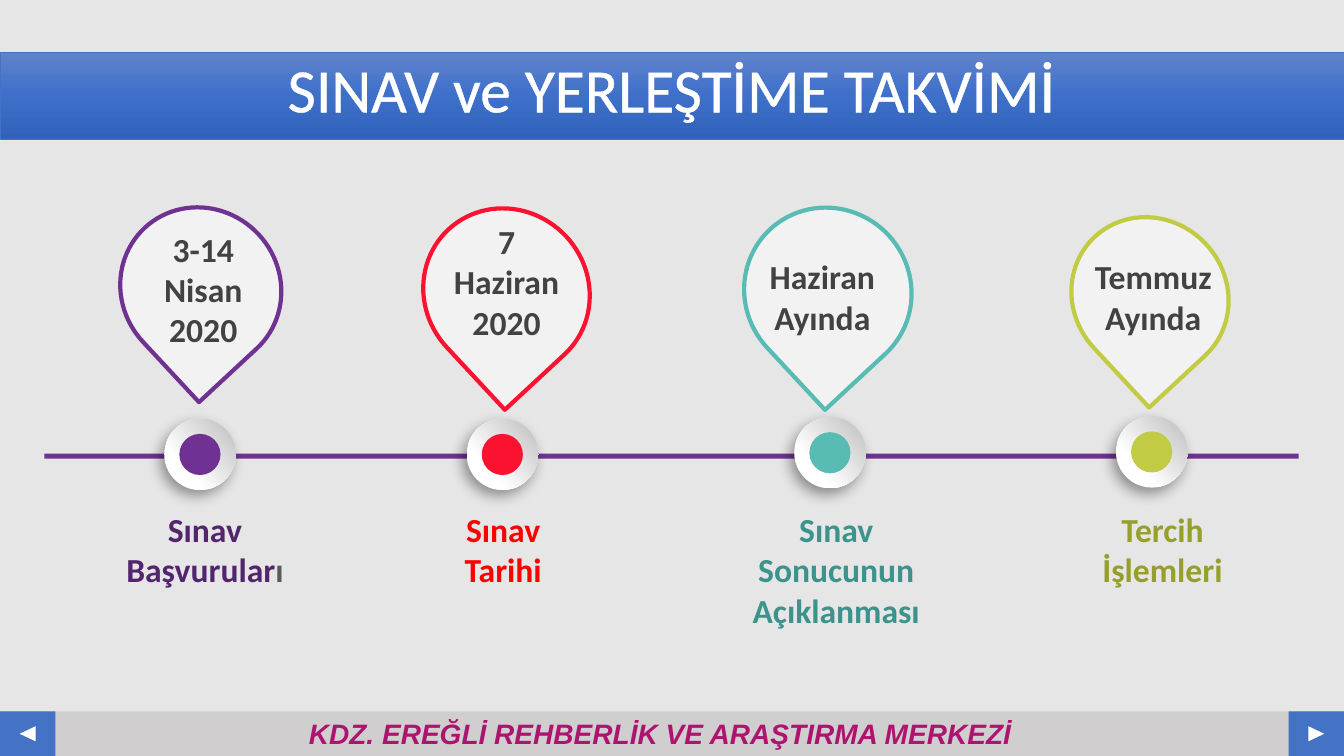
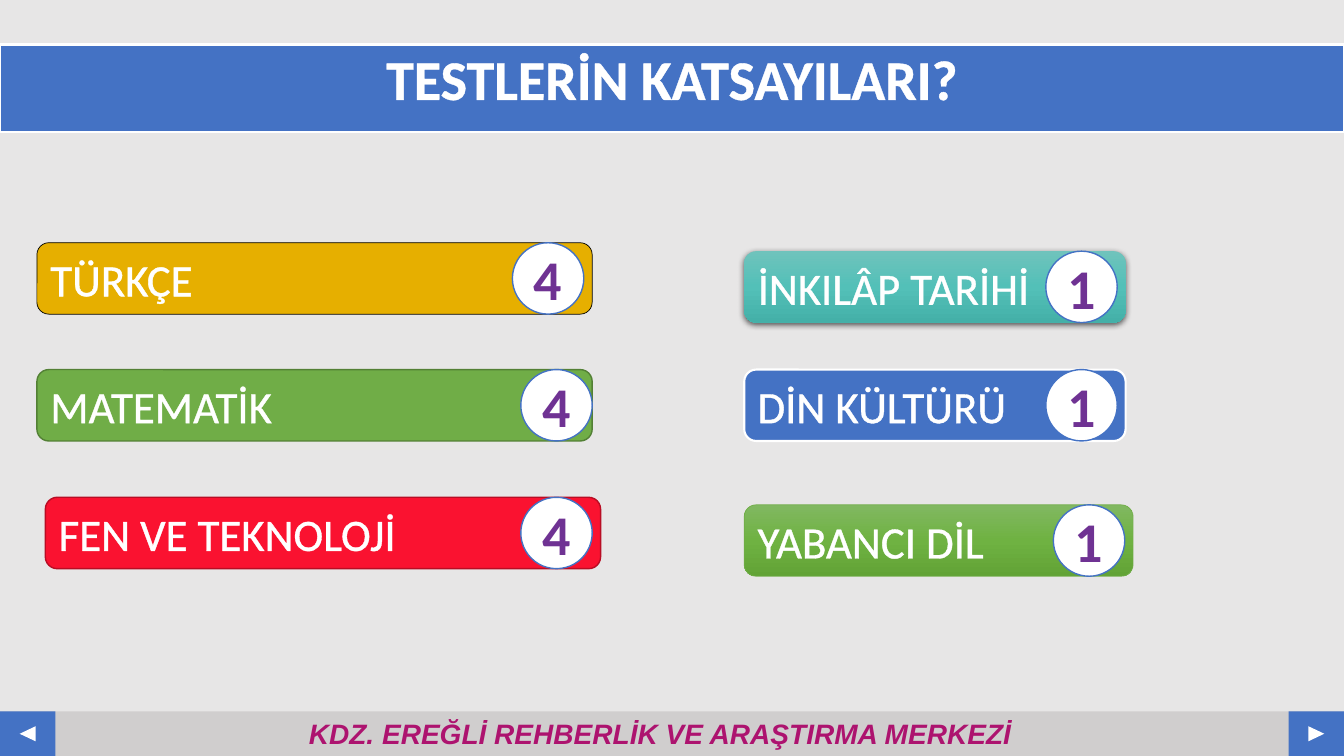
"""Build two exam guidance slides: the calendar and the test coefficients."""
from copy import deepcopy
from dataclasses import dataclass

from lxml import etree
from pptx import Presentation
from pptx import util as u
from pptx.dml.color import RGBColor
from pptx.enum import shapes, text
from pptx.oxml.ns import qn


@dataclass(frozen=True)
class Theme:
    body_font: str = "Calibri"
    footer_font: str = "Arial"
    background: str = "E7E6E6"
    footer: str = "D0CECE"
    footer_text: str = "AD136F"
    white: str = "FFFFFF"
    black: str = "000000"
    blue: str = "4472C4"
    purple: str = "6F3293"
    red: str = "FA1230"
    teal: str = "58BBB4"
    lime: str = "C2CB44"
    green: str = "70AD47"
    gold: str = "E6AF00"
    pin: str = "F2F2F2"
    pin_text: str = "424242"
    gray: str = "595959"
    title_fade: tuple = (((0, "6183CB"), (50, "3E70CA"), (100, "3062BB")), 90)
    teal_fade: tuple = (((0, "6FC3BC"), (50, "53C0B8"), (100, "44B0A8")), 90)
    green_fade: tuple = (((0, "81B861"), (50, "6FB242"), (100, "62A336")), 90)
    ring_fade: tuple = (((29, "FFFFFF"), (98, "BFBFBF")), 318)
    footer_size: int = 20
    label_size: int = 24
    pill_size: int = 32
    badge_size: int = 40


theme = Theme()
kinds = shapes.MSO_SHAPE
align = text.PP_ALIGN
anchors = text.MSO_ANCHOR

presentation = Presentation()
presentation.slide_width = u.Inches(13.33)
presentation.slide_height = u.Inches(7.5)
COLUMNS, ROWS = 160, 90
column = presentation.slide_width / COLUMNS
row = presentation.slide_height / ROWS


def draw(slide, kind, left, top, width, height, fill=None, line=None, shadow=None):
    """Place a preset shape, or a text box when kind is None, on the grid."""
    box = [round(v) for v in (left * column, top * row, width * column, height * row)]
    if kind is None:
        return slide.shapes.add_textbox(*box)
    shape = slide.shapes.add_shape(kind, *box)
    shape.shadow.inherit = False
    if isinstance(fill, tuple):
        stops, angle = fill
        shape.fill.gradient()
        stop_list = shape._element.spPr.find(".//" + qn("a:gsLst"))
        while len(stop_list) < len(stops):
            stop_list.append(deepcopy(stop_list[-1]))
        for stop, (position, color) in zip(shape.fill.gradient_stops, stops):
            stop.position = position / 100
            stop.color.rgb = RGBColor.from_string(color)
        shape.fill.gradient_angle = 360 - angle
    else:
        shape.fill.solid()
        shape.fill.fore_color.rgb = RGBColor.from_string(fill)
    if line:
        color, weight = line
        shape.line.color.rgb = RGBColor.from_string(color)
        shape.line.width = u.Pt(weight)
    else:
        shape.line.fill.background()
    if shadow:
        alpha, blur, distance, direction = shadow
        effects = shape._element.spPr.find(qn("a:effectLst"))
        outer = etree.SubElement(
            effects, qn("a:outerShdw"), blurRad=str(u.Pt(blur)),
            dist=str(u.Pt(distance)), dir=str(direction * 60000), rotWithShape="0")
        color = etree.SubElement(outer, qn("a:srgbClr"), val=theme.black)
        etree.SubElement(color, qn("a:alpha"), val=str(alpha * 1000))
    return shape


def write(shape, lines, size, color, font=theme.body_font, bold=False, italic=False,
          alignment=align.CENTER, anchor=anchors.TOP, wrap=True, spacing=None,
          margins=(0.1, 0.05), outline=False, tail="", tail_color=theme.gray):
    """Fill a shape with one paragraph per line; the tail ends each line in its own colour."""
    frame = shape.text_frame
    frame.word_wrap = wrap
    frame.vertical_anchor = anchor
    frame.margin_left = frame.margin_right = u.Inches(margins[0])
    frame.margin_top = frame.margin_bottom = u.Inches(margins[1])
    for index, content in enumerate(lines):
        paragraph = frame.add_paragraph() if index else frame.paragraphs[0]
        paragraph.alignment = alignment
        paragraph.line_spacing = spacing
        for part, shade in ((content, color), (tail, tail_color)):
            if not part:
                continue
            run = paragraph.add_run()
            run.text = part
            run.font.name = font
            run.font.size = u.Pt(size)
            run.font.bold = bold
            run.font.italic = italic
            run.font.color.rgb = RGBColor.from_string(shade)
            if outline:
                edge = etree.Element(qn("a:ln"), w=str(u.Pt(1.45)))
                solid = etree.SubElement(edge, qn("a:solidFill"))
                etree.SubElement(solid, qn("a:srgbClr"), val=shade)
                run._r.get_or_add_rPr().insert(0, edge)


titles = [
    ("SINAV ve YERLEŞTİME TAKVİMİ", 6.2, 44, False, theme.title_fade, (theme.blue, 0.5)),
    ("TESTLERİN KATSAYILARI?", 5.3, 40, True, theme.blue, (theme.white, 1.5)),
]
footer_top, footer_height, button_width = 84.7, 5.3, 6.6
arrow_width, arrow_height, arrow_inset = 1.8, 1.9, 2.4

for title, top, size, bold, fill, line in titles:
    slide = presentation.slides.add_slide(presentation.slide_layouts[6])
    slide.background.fill.solid()
    slide.background.fill.fore_color.rgb = RGBColor.from_string(theme.background)

    draw(slide, kinds.RECTANGLE, 0, footer_top, COLUMNS, footer_height, theme.footer)
    for button_left, arrow_left, rotation in (
            (0, arrow_inset, 270),
            (COLUMNS - button_width, COLUMNS - arrow_inset - arrow_width, 90)):
        draw(slide, kinds.RECTANGLE, button_left, footer_top, button_width,
             footer_height, theme.blue)
        arrow = draw(slide, kinds.ISOSCELES_TRIANGLE, arrow_left, 86.4,
                     arrow_width, arrow_height, theme.white)
        arrow.rotation = rotation
    footer = draw(slide, None, 34.7, footer_top, 87.8, footer_height)
    write(footer, ["KDZ. EREĞLİ REHBERLİK VE ARAŞTIRMA MERKEZİ"], theme.footer_size,
          theme.footer_text, font=theme.footer_font, bold=True, italic=True)

    band = draw(slide, kinds.RECTANGLE, 0, top, COLUMNS, 10.4, fill, line)
    write(band, [title], size, theme.white, bold=bold, spacing=0.9,
          margins=(0.1, 0.07), outline=True)

calendar, coefficients = presentation.slides

draw(calendar, kinds.RECTANGLE, 5.3, 54, 149.3, 0.6, theme.purple)
ring_size, dot_size, date_width = 8.5, 4.9, 17
milestones = [
    (theme.purple, (23.8, 54.1), (14.5, 24.5, 18.8, 19.6), (24.2, 26.6),
     ["3-14", "Nisan", "2020"], (13, 22.8), "Sınav Başvurular", "ı", "53256E"),
    (theme.red, (59.8, 54.1), (50.6, 24.6, 19.4, 20.3), (60.3, 25.7),
     ["7", "Haziran", "2020"], (49.8, 20.2), "Sınav Tarihi", "", "FF0000"),
    (theme.teal, (98.8, 53.9), (88.7, 24.6, 19.7, 20.2), (97.9, 29.9),
     ["Haziran", "Ayında"], (86.6, 25.9), "Sınav Sonucunun Açıklanması", "", "3C938C"),
    (theme.lime, (137.1, 53.8), (127.8, 25.6, 18.2, 19.3), (137.3, 29.9),
     ["Temmuz", "Ayında"], (129.1, 18.6), "Tercih İşlemleri", "", "979F2C"),
]
for color, marker, pin_box, date_at, date, label_span, label, tail, shade in milestones:
    for diameter, fill, shadow in ((ring_size, theme.ring_fade, (39, 10, 5, 123)),
                                   (dot_size, color, None)):
        draw(calendar, kinds.OVAL, marker[0] - diameter / 2, marker[1] - diameter / 2,
             diameter, diameter, fill, shadow=shadow)
    pin = draw(calendar, kinds.TEAR, *pin_box, theme.pin, (color, 3))
    pin.rotation = 137.1
    date_box = draw(calendar, None, date_at[0] - date_width / 2, date_at[1],
                    date_width, 5.4 * len(date))
    write(date_box, date, theme.label_size, theme.pin_text, bold=True, wrap=False)
    label_box = draw(calendar, None, label_span[0], 60, label_span[1], 11)
    write(label_box, [label], theme.label_size, shade, bold=True, tail=tail)

pill_height = 8.5
tests = [
    ("TÜRKÇE", "4", 4.4, 28.9, 66.1, 1, theme.gold, (theme.black, 0.5), None),
    ("MATEMATİK", "4", 4.4, 44, 66.1, 0, theme.green, ("538035", 1), None),
    ("FEN VE TEKNOLOJİ", "4", 5.4, 59.2, 66.1, 1, theme.red, ("B90D24", 1), None),
    ("İNKILÂP TARİHİ", "1", 88.6, 29.9, 45.4, 1, theme.teal_fade, None, (63, 4.5, 1.5, 90)),
    ("DİN KÜLTÜRÜ", "1", 88.6, 44, 45.4, 1, theme.blue, (theme.white, 1.5), None),
    ("YABANCI DİL", "1", 88.6, 60.1, 46.3, 1, theme.green_fade, (theme.green, 0.5), None),
]
for name, coefficient, left, top, width, inset, fill, line, shadow in tests:
    pill = draw(coefficients, kinds.FLOWCHART_ALTERNATE_PROCESS, left, top, width,
                pill_height, fill, line, shadow)
    write(pill, [name], theme.pill_size, theme.white, alignment=align.LEFT,
          anchor=anchors.MIDDLE, outline=True)
    badge = draw(coefficients, kinds.OVAL, left + width - inset - pill_height, top,
                 pill_height, pill_height, theme.white, (theme.blue, 1))
    write(badge, [coefficient], theme.badge_size, theme.purple, bold=True,
          anchor=anchors.MIDDLE, margins=(0, 0.05))

presentation.save("out.pptx")
